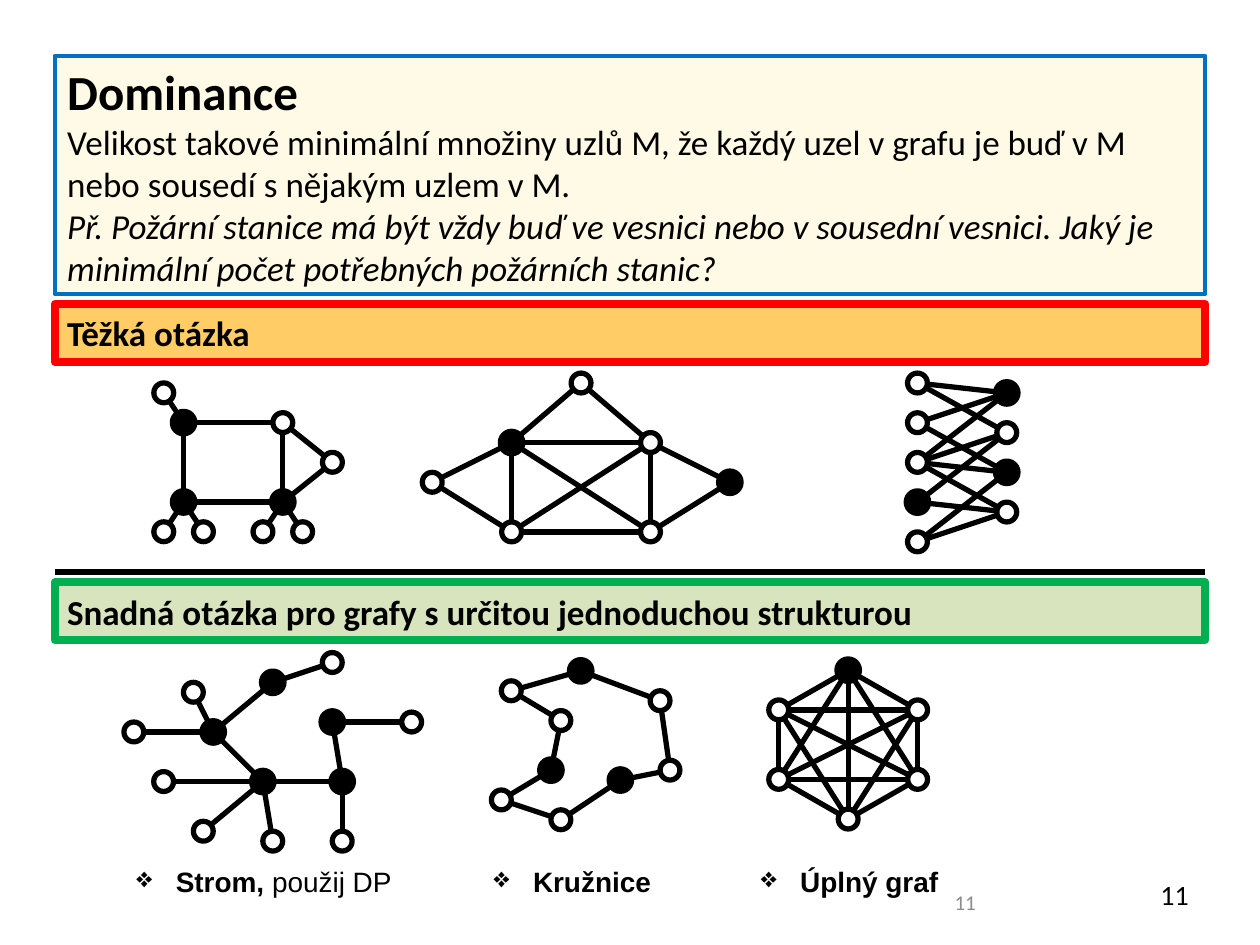
"""Build the slide on graph dominance with hard and easy example graphs."""
from dataclasses import dataclass
from itertools import combinations

from lxml import etree
from pptx import Presentation
from pptx.dml.color import RGBColor
from pptx.enum.shapes import MSO_CONNECTOR, MSO_SHAPE
from pptx.enum.text import MSO_ANCHOR, MSO_AUTO_SIZE, PP_ALIGN
from pptx.oxml.ns import qn
from pptx.util import Pt

STRAIGHT = MSO_CONNECTOR.STRAIGHT
RECTANGLE, ELLIPSE = MSO_SHAPE.RECTANGLE, MSO_SHAPE.OVAL
TOP, MIDDLE = MSO_ANCHOR.TOP, MSO_ANCHOR.MIDDLE
LEFT, RIGHT = PP_ALIGN.LEFT, PP_ALIGN.RIGHT
NO_FIT = MSO_AUTO_SIZE.NONE


@dataclass(frozen=True)
class Theme:
    ink: RGBColor = RGBColor(0, 0, 0)
    paper: RGBColor = RGBColor(255, 255, 255)
    muted: RGBColor = RGBColor.from_string("8C8C8C")
    cream: RGBColor = RGBColor.from_string("FFFAE5")
    blue: RGBColor = RGBColor.from_string("0070C0")
    orange: RGBColor = RGBColor.from_string("FFCC66")
    red: RGBColor = RGBColor.from_string("FF0000")
    pale_green: RGBColor = RGBColor.from_string("D7E4BD")
    green: RGBColor = RGBColor.from_string("00B050")
    heading: Pt = Pt(28)
    body: Pt = Pt(20)
    label: Pt = Pt(16)
    small: Pt = Pt(12)


theme = Theme()
deck = Presentation()
deck.slide_width, deck.slide_height = Pt(720), Pt(540)
page = deck.slides.add_slide(deck.slide_layouts[5])


def write_text(box, paragraphs, align=LEFT, anchor=MIDDLE, color=theme.ink, bullet=None):
    frame = box.text_frame
    settings = {"word_wrap": True, "auto_size": NO_FIT, "vertical_anchor": anchor}
    for name, value in settings.items():
        setattr(frame, name, value)
    for index, spans in enumerate(paragraphs):
        para = frame.add_paragraph() if index else frame.paragraphs[0]
        para.alignment = align
        if bullet:
            properties = para._p.get_or_add_pPr()
            properties.set("marL", str(Pt(22.5)))
            properties.set("indent", str(Pt(-22.5)))
            etree.SubElement(properties, qn("a:buChar")).set("char", bullet)
        for text, font_format in spans:
            span = para.add_run()
            span.text = text
            for name, value in font_format.items():
                setattr(span.font, name, value)
            span.font.color.rgb = color


def draw_line(start, end):
    line = page.shapes.add_connector(STRAIGHT, *map(Pt, (*start, *end)))
    line.line.color.rgb = theme.ink
    line.line.width = Pt(3)
    etree.SubElement(line._element.spPr, qn("a:effectLst"))


margin, full_width = 31.2, 657.6
heading = {"name": "Calibri", "size": theme.heading, "bold": True}
body = {"name": "Calibri", "size": theme.body, "bold": False}
banner_font = {**body, "bold": True}
number = {"name": "Calibri", "size": theme.label}
label = {"name": "Arial", "size": theme.label, "bold": False}
strong_label = {**label, "bold": True}

definition = page.shapes.title
place = {"left": margin, "top": 31.9, "width": full_width, "height": 136.2}
for name, value in place.items():
    setattr(definition, name, Pt(value))
definition.fill.solid()
definition.fill.fore_color.rgb = theme.cream
definition.line.color.rgb = theme.blue
definition.line.width = Pt(2.25)
write_text(definition, [
    [("Dominance", heading)],
    [("Velikost takové minimální množiny uzlů M, že každý uzel v grafu je buď v M "
      "nebo sousedí s nějakým uzlem v M.", body)],
    [("Př. Požární stanice má být vždy buď ve vesnici nebo v sousední vesnici. "
      "Jaký je minimální počet potřebných požárních stanic?", {**body, "italic": True})],
])

banners = [
    ("Těžká otázka", 173.7, theme.orange, theme.red),
    ("Snadná otázka pro grafy s určitou jednoduchou strukturou", 332.8,
     theme.pale_green, theme.green),
]
for text, top, fill, edge in banners:
    banner = page.shapes.add_shape(
        RECTANGLE, Pt(margin), Pt(top), Pt(full_width), Pt(33))
    banner.shadow.inherit = False
    banner.fill.solid()
    banner.fill.fore_color.rgb = fill
    banner.line.color.rgb = edge
    banner.line.width = Pt(4.5)
    write_text(banner, [[(text, banner_font)]])
draw_line((margin, 326.9), (margin + full_width, 326.9))

grid, diameter = 5.67, 11.34
house = {
    "origin": (93.6, 224.5), "dominating": "BEF",
    "nodes": {"A": (0, 0), "B": (2, 3), "C": (12, 3), "D": (17, 7), "E": (2, 11),
              "F": (12, 11), "G": (0, 14), "H": (4, 14), "I": (10, 14), "J": (14, 14)},
    "edges": "AB BC CD DF FE EB CF EG EH FI FJ".split(),
}
roof = {
    "origin": (247, 218.9), "dominating": "BE",
    "nodes": {"A": (15, 0), "B": (8, 6), "C": (22, 6), "D": (0, 10),
              "E": (30, 10), "F": (8, 15), "G": (22, 15)},
    "edges": "AB AC BC BD BF BG CE CF CG DF EG FG".split(),
}
bipartite = {
    "origin": (524.3, 218.9), "dominating": "DPR",
    "nodes": {**{key: (0, 4 * row) for row, key in enumerate("ABCDE")},
              **{key: (9, 4 * row + 1) for row, key in enumerate("PQRS")}},
    "edges": "AP AQ BP BR CP CQ CR CS DQ DS ER ES".split(),
}
tree = {
    "origin": (76.5, 378.6), "dominating": "CDFIJ",
    "nodes": {"A": (0, 7), "B": (6, 3), "C": (8, 7), "D": (14, 2), "E": (20, 0),
              "F": (20, 6), "G": (28, 6), "H": (3, 12), "I": (13, 12),
              "J": (21, 12), "K": (7, 17), "L": (14, 18), "M": (21, 18)},
    "edges": "AC BC CD DE CI HI IJ IK IL JF FG JM".split(),
}
cycle = {
    "origin": (286.5, 383.4), "dominating": "ADG",
    "nodes": {"A": (8, 0), "B": (1, 2), "C": (6, 5), "D": (5, 10), "E": (0, 13),
              "F": (6, 15), "G": (12, 11), "H": (17, 10), "I": (16, 3)},
    "edges": "AB BC CD DE EF FG GH HI IA".split(),
}
complete = {
    "origin": (445, 383), "dominating": "A",
    "nodes": {"A": (7, 0), "B": (14, 4), "C": (14, 11),
              "D": (7, 15), "E": (0, 11), "F": (0, 4)},
    "edges": combinations("ABCDEF", 2),
}

for graph in (house, roof, bipartite, tree, cycle, complete):
    left, top = graph["origin"]
    centres = {key: (left + grid * column, top + grid * row)
               for key, (column, row) in graph["nodes"].items()}
    for start, end in graph["edges"]:
        draw_line(centres[start], centres[end])
    for key, (x, y) in centres.items():
        chosen = key in graph["dominating"]
        node = page.shapes.add_shape(
            ELLIPSE, Pt(x - diameter / 2), Pt(y - diameter / 2), Pt(diameter), Pt(diameter))
        node.shadow.inherit = False
        node.fill.solid()
        node.fill.fore_color.rgb = theme.ink if chosen else theme.paper
        node.line.color.rgb = theme.ink
        node.line.width = Pt(4.5 if chosen else 3)

captions = [
    (70.9, 193, [("Strom, ", strong_label), ("použij DP", label)]),
    (275, 142, [("Kružnice", strong_label)]),
    (427.7, 123, [("Úplný graf", strong_label)]),
]
for left, width, spans in captions:
    caption = page.shapes.add_textbox(Pt(left), Pt(490.4), Pt(width), Pt(26.6))
    write_text(caption, [spans], anchor=TOP, bullet="❖")

page_numbers = [
    (518.4, 496.8, number, theme.ink),
    (396.7, 501.1, {**number, "size": theme.small}, theme.muted),
]
for left, top, font_format, color in page_numbers:
    box = page.shapes.add_textbox(Pt(left), Pt(top), Pt(168), Pt(28.8))
    write_text(box, [[("11", font_format)]], align=RIGHT, color=color)

deck.save("out.pptx")
